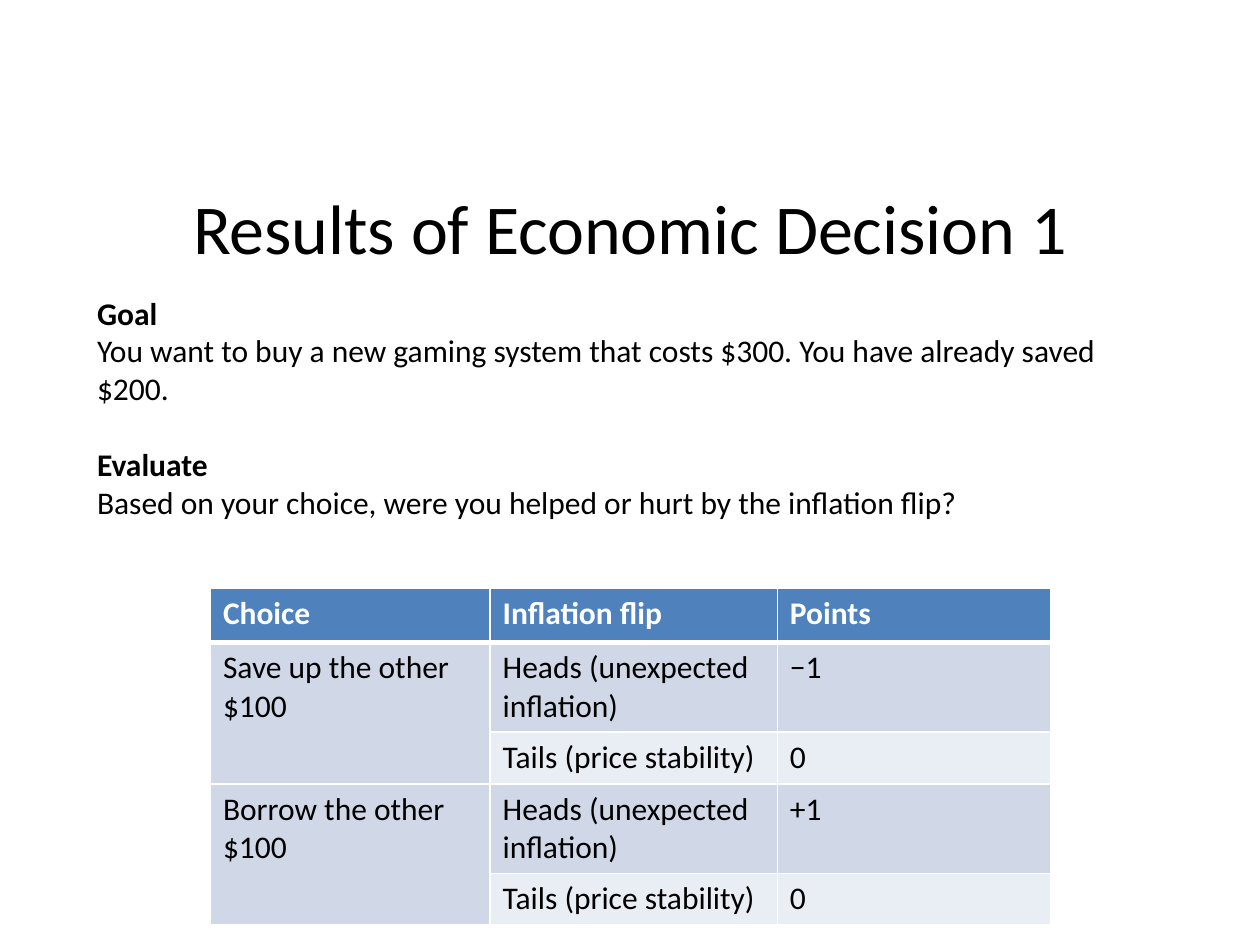
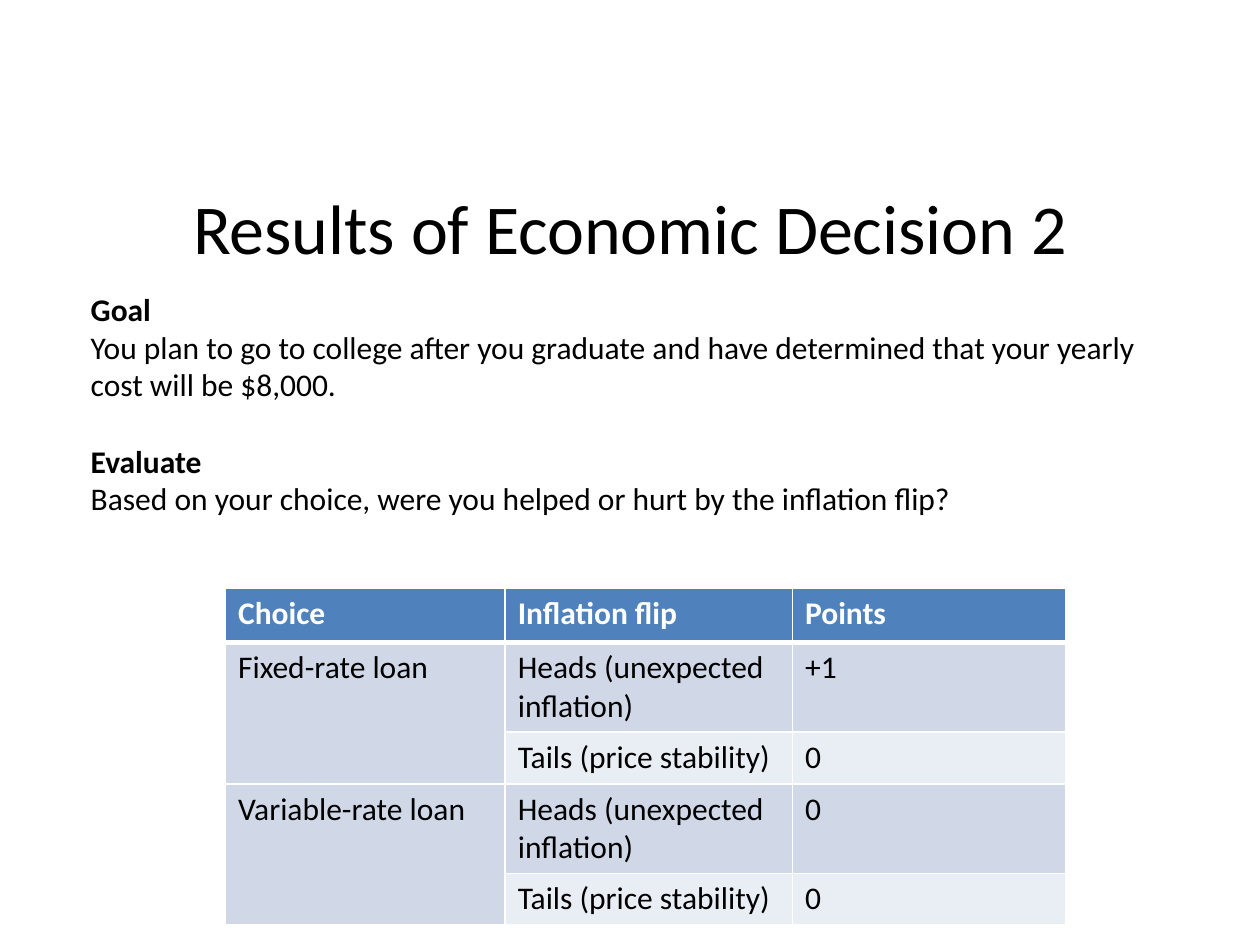
"""Build two slides that score economic decisions against an inflation flip."""
import dataclasses

import lxml.etree
import pptx
import pptx.dml.color
import pptx.enum.text
import pptx.oxml.ns
import pptx.util


@dataclasses.dataclass(frozen=True)
class Theme:
    font: str = "Calibri"
    title_size: int = 40
    text_size: int = 18
    ink: str = "000000"
    paper: str = "FFFFFF"
    header: str = "4F81BD"
    heads: str = "D0D8E8"
    tails: str = "E9EDF4"
    rule: int = 1
    header_rule: int = 3


THEME = Theme()


def write(para, text, size=THEME.text_size, color=THEME.ink, bold=False, align=None, before=0):
    span = para.add_run()
    span.text = text
    span.font.name = THEME.font
    span.font.size = pptx.util.Pt(size)
    span.font.bold = bold
    span.font.color.rgb = pptx.dml.color.RGBColor.from_string(color)
    para.alignment = align
    para.space_before = pptx.util.Pt(before)


def place(box, left, top, width, height):
    box.left, box.width = (pptx.util.Inches(10 * share) for share in (left, width))
    box.top, box.height = (pptx.util.Inches(7.5 * share) for share in (top, height))
    box.text_frame.vertical_anchor = pptx.enum.text.MSO_ANCHOR.TOP
    box.text_frame.auto_size = pptx.enum.text.MSO_AUTO_SIZE.NONE
    box.text_frame.word_wrap = True


HEADINGS = ("Choice", "Inflation flip", "Points")
FLIPS = ("Heads (unexpected inflation)", "Tails (price stability)")
COLUMN_SHARES = (0.222, 0.228, 0.217)
ROW_HEIGHTS = (0.43, 0.41, 0.41, 0.41, 0.41)
LINE_GAP = 22

DECISIONS = (
    {
        "goal": "You want to buy a new gaming system that costs $300. You have already saved $200.",
        "choices": ("Save up the other $100", "Borrow the other $100"),
        "points": ("−1", "0", "+1", "0"),
        "title_height": 0.093,
        "body": (0.067, 0.304, 0.867, 0.296),
        "table_left": 0.167,
    },
    {
        "goal": "You plan to go to college after you graduate and have determined that "
                "your yearly cost will be $8,000.",
        "choices": ("Fixed-rate loan", "Variable-rate loan"),
        "points": ("+1", "0", "0", "0"),
        "title_height": 0.111,
        "body": (0.062, 0.3, 0.875, 0.256),
        "table_left": 0.179,
    },
)

deck = pptx.Presentation()
deck.slide_width = pptx.util.Inches(10)
deck.slide_height = pptx.util.Inches(7.5)

for number, decision in enumerate(DECISIONS, start=1):
    page = deck.slides.add_slide(deck.slide_layouts[1])

    title = page.shapes.title
    place(title, 0.05, 0.189, 0.9, decision["title_height"])
    write(title.text_frame.paragraphs[0], f"Results of Economic Decision {number}",
          size=THEME.title_size, align=pptx.enum.text.PP_ALIGN.CENTER)

    body = page.placeholders[1]
    place(body, *decision["body"])
    lines = (
        ("Goal", True, 0),
        (decision["goal"], False, 0),
        ("Evaluate", True, LINE_GAP),
        ("Based on your choice, were you helped or hurt by the inflation flip?", False, 0),
    )
    for index, (text, bold, before) in enumerate(lines):
        para = body.text_frame.add_paragraph() if index else body.text_frame.paragraphs[0]
        properties = para._p.get_or_add_pPr()
        properties.set("marL", "0")
        properties.set("indent", "0")
        lxml.etree.SubElement(properties, pptx.oxml.ns.qn("a:buNone"))
        write(para, text, bold=bold, before=before)

    table = page.shapes.add_table(
        len(ROW_HEIGHTS), len(HEADINGS),
        pptx.util.Inches(10 * decision["table_left"]), pptx.util.Inches(4.67),
        pptx.util.Inches(10 * sum(COLUMN_SHARES)), pptx.util.Inches(sum(ROW_HEIGHTS)),
    ).table
    table.horz_banding = False
    for column, share in zip(table.columns, COLUMN_SHARES):
        column.width = pptx.util.Inches(10 * share)
    for row, height in zip(table.rows, ROW_HEIGHTS):
        row.height = pptx.util.Inches(height)

    rows = [HEADINGS]
    for index, points in enumerate(decision["points"]):
        choice = "" if index % 2 else decision["choices"][index // 2]
        rows.append((choice, FLIPS[index % 2], points))

    for row_index, row in enumerate(rows):
        is_header = row_index == 0
        band = THEME.header if is_header else (THEME.tails, THEME.heads)[row_index % 2]
        for column_index, text in enumerate(row):
            cell = table.cell(row_index, column_index)
            if text:
                write(cell.text_frame.paragraphs[0], text, bold=is_header,
                      color=THEME.paper if is_header else THEME.ink)
            for side in ("lnL", "lnR", "lnT", "lnB"):
                under_header = (row_index, side) in ((0, "lnB"), (1, "lnT"))
                width = THEME.header_rule if under_header else THEME.rule
                edge = lxml.etree.SubElement(cell._tc.get_or_add_tcPr(),
                                             pptx.oxml.ns.qn(f"a:{side}"),
                                             w=str(pptx.util.Pt(width)))
                fill = lxml.etree.SubElement(edge, pptx.oxml.ns.qn("a:solidFill"))
                lxml.etree.SubElement(fill, pptx.oxml.ns.qn("a:srgbClr"), val=THEME.paper)
            cell.fill.solid()
            cell.fill.fore_color.rgb = pptx.dml.color.RGBColor.from_string(band)

    for first_row in (1, 3):
        table.cell(first_row, 0).merge(table.cell(first_row + 1, 0))

deck.save("out.pptx")
